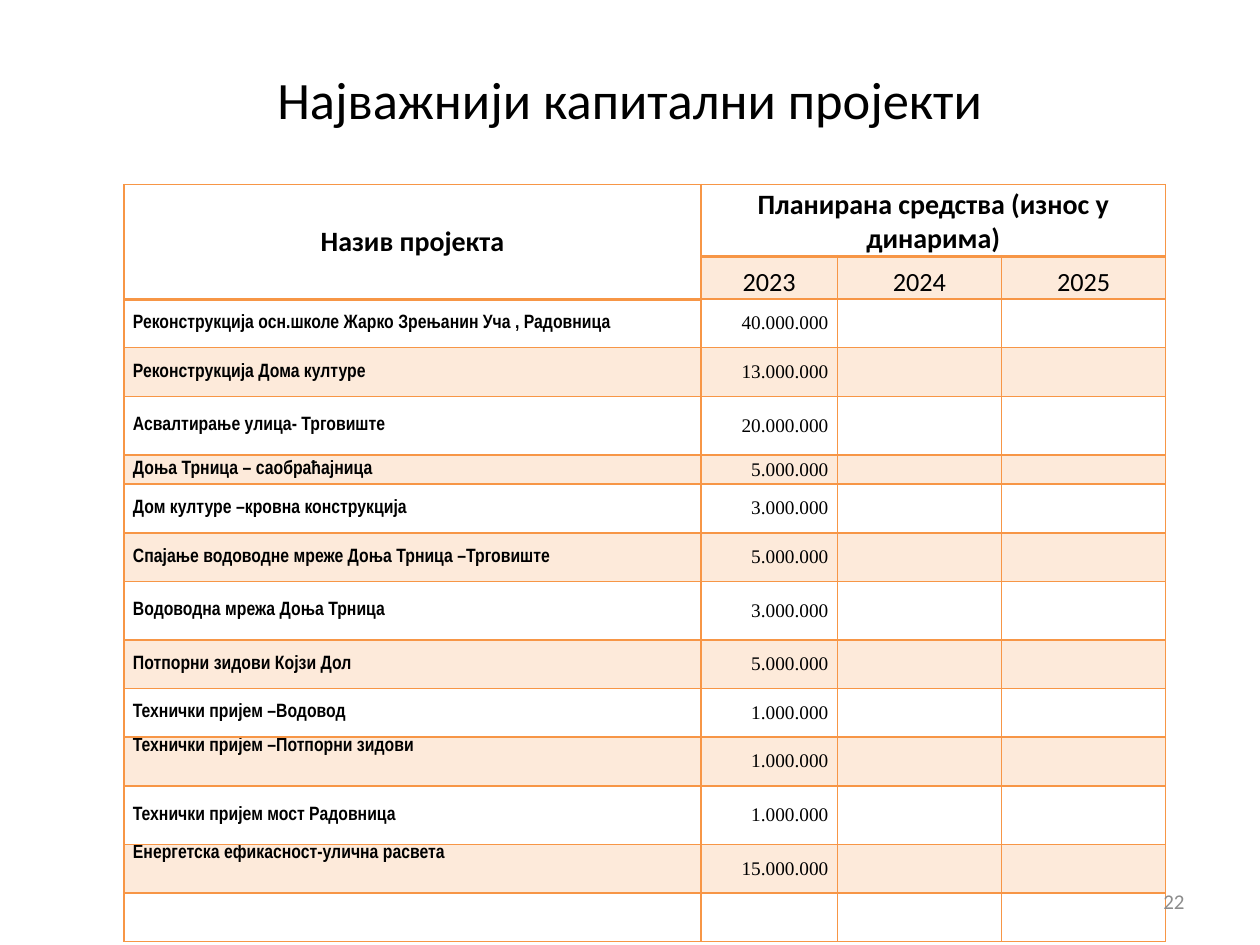
from lxml import etree
from pptx import Presentation
from pptx.dml.color import RGBColor
from pptx.enum import text
from pptx.oxml import ns
from pptx.util import Cm, Pt

# Content
TITLE = "Најважнији капитални пројекти"
PAGE_NUMBER = "22"
NAME_HEADING = "Назив пројекта"
FUNDS_HEADING = "Планирана средства (износ у динарима)"
YEARS = ["2023", "2024", "2025"]
NORMAL, TALL, LOW = 0.98, 1.18, 0.59  # row heights in cm
MIDDLE, TOP, BOTTOM = (text.MSO_ANCHOR.MIDDLE, text.MSO_ANCHOR.TOP,
                       text.MSO_ANCHOR.BOTTOM)
PROJECTS = [  # name, amount, row height, name anchor
    ("Реконструкција осн.школе Жарко Зрењанин Уча , Радовница", "40.000.000", NORMAL, MIDDLE),
    ("Реконструкција Дома културе", "13.000.000", NORMAL, MIDDLE),
    ("Асвалтирање улица- Трговиште", "20.000.000", TALL, MIDDLE),
    ("Доња Трница – саобраћајница", "5.000.000", LOW, MIDDLE),
    ("Дом културе –кровна конструкција", "3.000.000", NORMAL, MIDDLE),
    ("Спајање водоводне мреже Доња Трница –Трговиште", "5.000.000", NORMAL, MIDDLE),
    ("Водоводна мрежа Доња Трница", "3.000.000", TALL, MIDDLE),
    ("Потпорни зидови Којзи Дол", "5.000.000", NORMAL, MIDDLE),
    ("Технички пријем –Водовод", "1.000.000", NORMAL, MIDDLE),
    ("Технички пријем –Потпорни зидови", "1.000.000", NORMAL, TOP),
    ("Технички пријем мост Радовница", "1.000.000", TALL, MIDDLE),
    ("Енергетска ефикасност-улична расвета", "15.000.000", NORMAL, TOP),
    ("", "", NORMAL, MIDDLE),
]
COLUMNS = [11.63, 2.75, 3.31, 3.31]
ROWS = [1.45, 0.86] + [project[2] for project in PROJECTS]
COLORS = {"text": "000000", "accent": "F79646", "number": "8C8C8C"}
LEFT, CENTER, RIGHT = text.PP_ALIGN.LEFT, text.PP_ALIGN.CENTER, text.PP_ALIGN.RIGHT


def write(frame, words, size, font, align, color="text", bold=False):
    para = frame.paragraphs[0]
    para.alignment = align
    span = para.add_run()
    span.text = words
    span.font.size = Pt(size)
    span.font.name = font
    span.font.bold = bold
    span.font.color.rgb = RGBColor.from_string(COLORS[color])


def style_cell(cell, row, col):
    """Borders first, then the fill, as the file format orders them."""
    cell.margin_left = cell.margin_right = Cm(0.18)
    cell.margin_top = cell.margin_bottom = 0
    properties = cell._tc.get_or_add_tcPr()
    thick = {"lnT": row == (2 if col == 0 else 1),
             "lnB": row == (1 if col == 0 else 0)}
    for side in ("lnL", "lnR", "lnT", "lnB"):
        line = etree.SubElement(properties, ns.qn("a:" + side),
                                w=str(Pt(2 if thick.get(side) else 1)))
        paint = etree.SubElement(line, ns.qn("a:solidFill"))
        etree.SubElement(paint, ns.qn("a:srgbClr"), val=COLORS["accent"])
    if row % 2 and (row > 1 or col > 0):
        cell.fill.solid()
        cell.fill.fore_color.rgb = RGBColor.from_string(COLORS["accent"])
        tint = properties.find(ns.qn("a:solidFill")).find(ns.qn("a:srgbClr"))
        etree.SubElement(tint, ns.qn("a:alpha"), val="20000")
    else:
        cell.fill.background()


def fill_cell(cell, words, size, font, align, anchor, bold=False):
    cell.vertical_anchor = anchor
    if words:
        write(cell.text_frame, words, size, font, align, bold=bold)
    else:  # keep blank cells from stretching low rows
        etree.SubElement(cell.text_frame.paragraphs[0]._p,
                         ns.qn("a:endParaRPr"), sz=str(size * 100))


deck = Presentation()
deck.slide_width, deck.slide_height = Cm(25.4), Cm(19.05)
page = deck.slides.add_slide(deck.slide_layouts[5])

# Title
title = page.shapes.title
title.left, title.top, title.width, title.height = Cm(1.27), Cm(0.76), Cm(22.86), Cm(2.44)
title.text_frame.vertical_anchor = MIDDLE
write(title.text_frame, TITLE, 30, "Calibri", CENTER)

# Table of projects
table = page.shapes.add_table(len(ROWS), len(COLUMNS), Cm(2.5), Cm(3.72),
                              Cm(sum(COLUMNS)), Cm(sum(ROWS))).table
table.first_row = table.horz_banding = False
for column, width in zip(table.columns, COLUMNS):
    column.width = Cm(width)
for row, height in enumerate(ROWS):
    table.rows[row].height = Cm(height)
    for col in range(len(COLUMNS)):
        style_cell(table.cell(row, col), row, col)

# Headings
table.cell(0, 0).merge(table.cell(1, 0))
table.cell(0, 1).merge(table.cell(0, 3))
fill_cell(table.cell(0, 0), NAME_HEADING, 16, "Calibri", CENTER, MIDDLE, True)
fill_cell(table.cell(0, 1), FUNDS_HEADING, 16, "Calibri", CENTER, BOTTOM, True)
for col, year in enumerate(YEARS, 1):
    fill_cell(table.cell(1, col), year, 15, "Calibri", CENTER, BOTTOM)

# Project rows
for row, (name, amount, _, anchor) in enumerate(PROJECTS, 2):
    fill_cell(table.cell(row, 0), name, 11, "Arial Narrow", LEFT, anchor, True)
    for col, value in enumerate((amount, "", ""), 1):
        fill_cell(table.cell(row, col), value, 11, "Times New Roman", RIGHT, MIDDLE)

# Page number
box = page.shapes.add_textbox(Cm(18.2), Cm(17.66), Cm(5.93), Cm(1.01))
box.text_frame.word_wrap = True
box.text_frame.vertical_anchor = MIDDLE
write(box.text_frame, PAGE_NUMBER, 12, "Calibri", RIGHT, "number")

deck.save("out.pptx")
